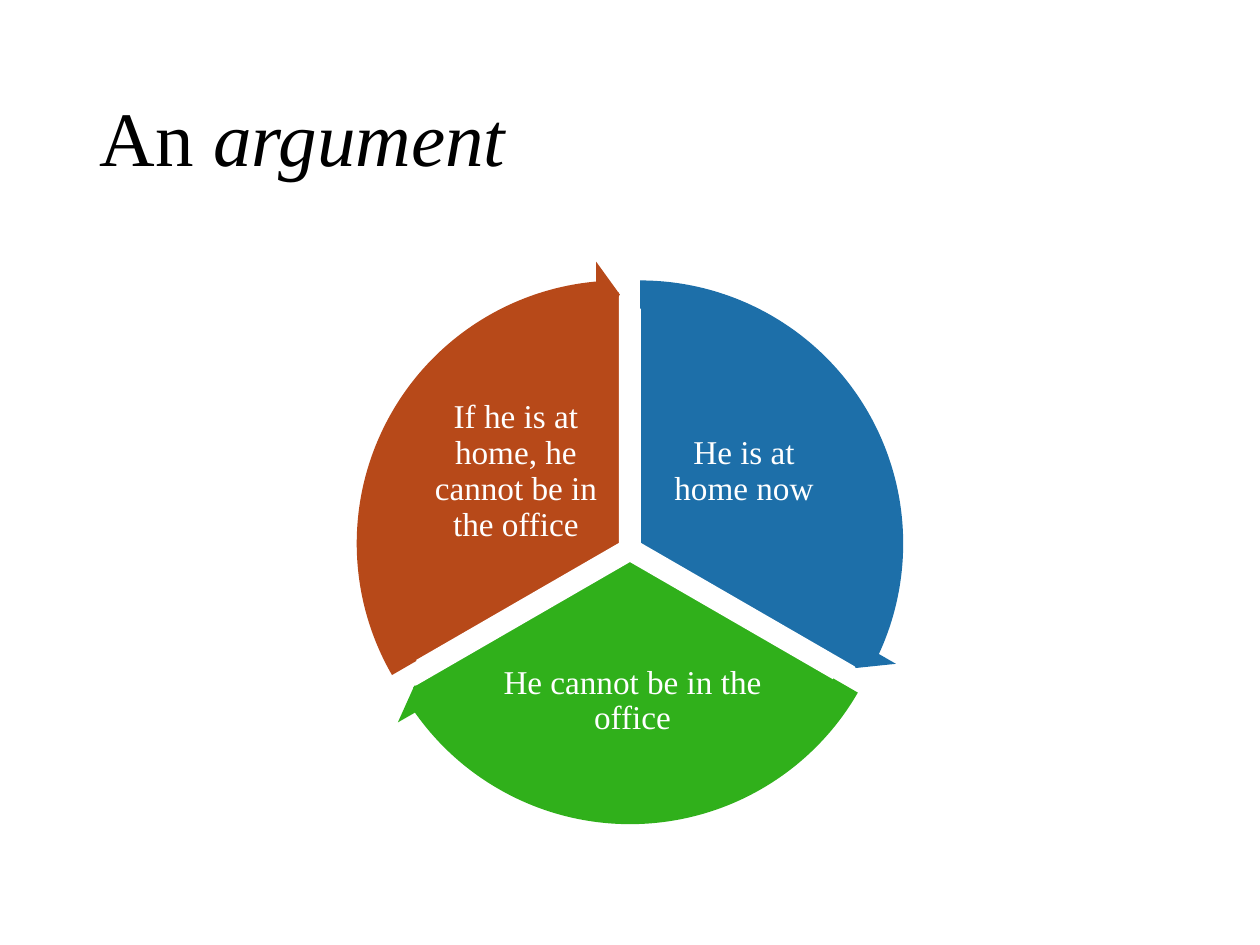
import math

from pptx import Presentation, util as u
from pptx.dml.color import RGBColor
from pptx.enum import shapes, text

COLOURS = {"ink": "000000", "paper": "FFFFFF",
           "blue": "1D6FA9", "green": "30B01B", "rust": "B74919"}
COLUMNS, ROWS = 100, 75
TITLE_ONLY = 5

# Cycle geometry, in grid units and degrees
CENTRE = (50, 43.6)
GAP = 0.93
PIE_SIZE, ARROW_SIZE = 40, 44.9
SWEEP, ARROW_SWEEP = 120, 114.54
BAND, HEAD_ANGLE, HEAD_WIDTH = 0.05, 3.28, 0.06

# Colour, wording and label box (column, row, width, height), clockwise from the top
STEPS = [
    ("blue", "He is at home now", (51.9, 31.5, 14.3, 11.9)),
    ("green", "He cannot be in the office", (39.5, 50.4, 21.4, 10.5)),
    ("rust", "If he is at home, he cannot be in the office", (33.8, 31.5, 14.3, 11.9)),
]


def angle_value(degrees):
    """Turn degrees into the normalised value of a shape adjustment."""
    return degrees % 360 * 0.6


class Deck:
    font = "Times New Roman"

    def __init__(self):
        self.presentation = Presentation()
        self.presentation.slide_width = u.Inches(10)
        self.presentation.slide_height = u.Inches(7.5)
        layout = self.presentation.slide_layouts[TITLE_ONLY]
        self.slide = self.presentation.slides.add_slide(layout)

    def box(self, column, row, width, height):
        across = self.presentation.slide_width / COLUMNS
        down = self.presentation.slide_height / ROWS
        return [u.Emu(round(length)) for length in
                (column * across, row * down, width * across, height * down)]

    def fill_text(self, frame, runs, size, colour, align):
        """Fill a frame with one paragraph of (wording, italic) runs."""
        frame.word_wrap = True
        frame.auto_size = text.MSO_AUTO_SIZE.NONE
        frame.vertical_anchor = text.MSO_ANCHOR.MIDDLE
        paragraph = frame.paragraphs[0]
        paragraph.alignment = align
        paragraph.line_spacing = 0.9
        for wording, italic in runs:
            run = paragraph.add_run()
            run.text = wording
            run.font.name = self.font
            run.font.size = u.Pt(size)
            run.font.italic = italic
            run.font.color.rgb = RGBColor.from_string(COLOURS[colour])

    def title(self, runs, box):
        title = self.slide.shapes.title
        title.left, title.top, title.width, title.height = self.box(*box)
        self.fill_text(title.text_frame, runs, 44, "ink", text.PP_ALIGN.LEFT)

    def label(self, wording, box):
        frame = self.slide.shapes.add_textbox(*self.box(*box)).text_frame
        frame.margin_left = frame.margin_right = u.Inches(0.03)
        frame.margin_top = frame.margin_bottom = u.Inches(0.03)
        self.fill_text(frame, [(wording, False)], 19, "paper", text.PP_ALIGN.CENTER)

    def round_shape(self, kind, size, start, colour, adjustments):
        """Add a round shape, moved out from the centre along its sector's middle."""
        middle = math.radians(start + SWEEP / 2)
        column = CENTRE[0] + GAP * math.cos(middle) - size / 2
        row = CENTRE[1] + GAP * math.sin(middle) - size / 2
        shape = self.slide.shapes.add_shape(kind, *self.box(column, row, size, size))
        shape.shadow.inherit = False
        shape.fill.solid()
        shape.fill.fore_color.rgb = RGBColor.from_string(COLOURS[colour])
        for index, value in enumerate(adjustments):
            shape.adjustments[index] = value
        return shape

    def sector(self, start, colour):
        angles = [angle_value(start), angle_value(start + SWEEP)]
        pie = self.round_shape(shapes.MSO_SHAPE.PIE, PIE_SIZE, start, colour, angles)
        pie.line.color.rgb = RGBColor.from_string(COLOURS["paper"])
        pie.line.width = u.Pt(1)

    def arrow(self, start, colour):
        adjustments = [BAND, HEAD_ANGLE, angle_value(start + ARROW_SWEEP),
                       angle_value(start), HEAD_WIDTH]
        arrow = self.round_shape(shapes.MSO_SHAPE.CIRCULAR_ARROW, ARROW_SIZE,
                                 start, colour, adjustments)
        arrow.line.fill.background()


def main():
    deck = Deck()
    deck.title([("An ", False), ("argument", True)], (6.9, 4, 86.2, 14.5))
    starts = [270 + SWEEP * index for index in range(len(STEPS))]
    for start, (colour, wording, box) in zip(starts, STEPS):
        deck.sector(start, colour)
        deck.label(wording, box)
    for start, (colour, _, _) in zip(starts, STEPS):
        deck.arrow(start, colour)
    deck.presentation.save("out.pptx")


if __name__ == "__main__":
    main()
